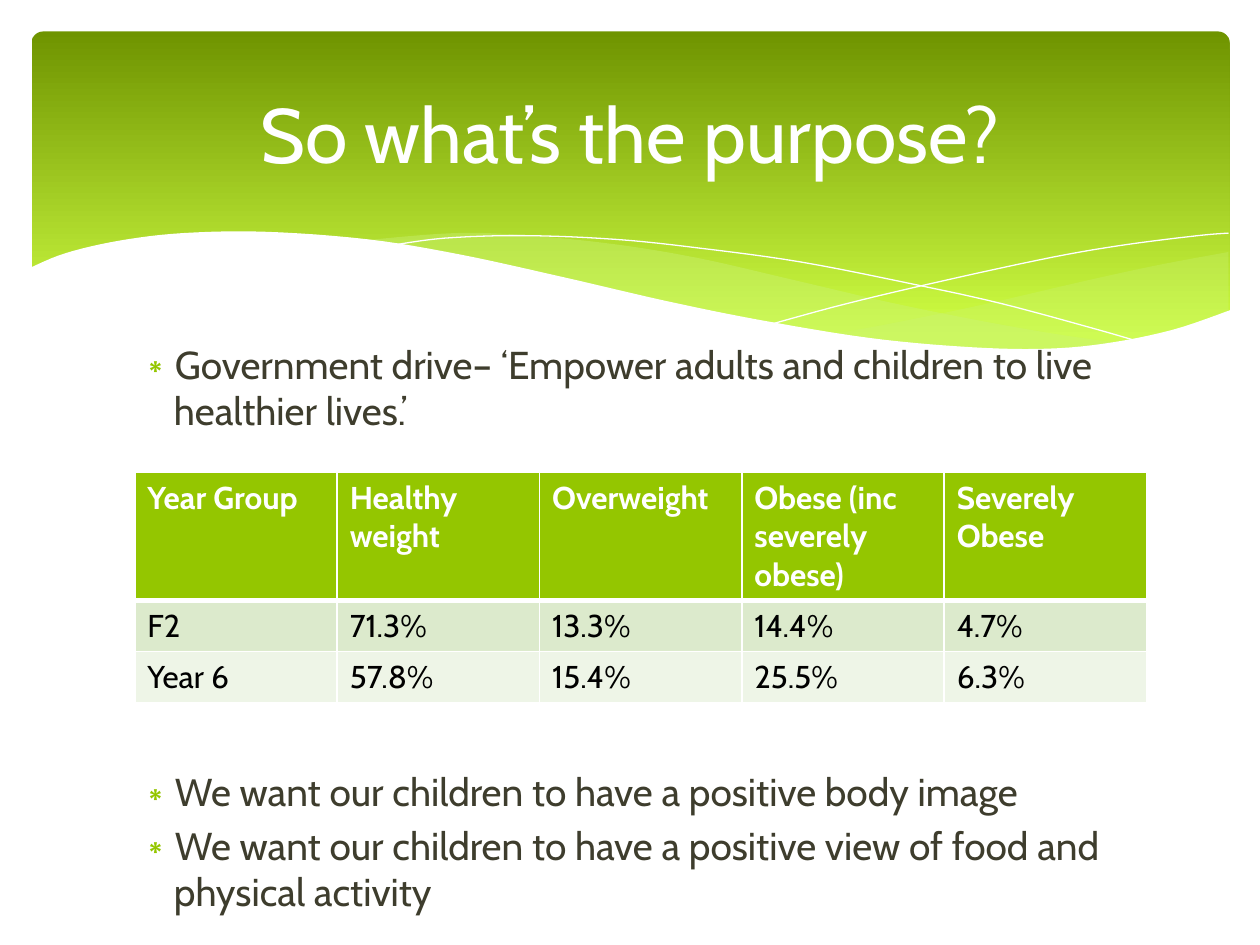
import lxml.etree
import pptx
import pptx.dml.color
import pptx.enum.shapes
import pptx.enum.text
import pptx.oxml.ns
import pptx.util

Inches = pptx.util.Inches
Pt = pptx.util.Pt
RGBColor = pptx.dml.color.RGBColor
qn = pptx.oxml.ns.qn

FONT = "Cabin"
WHITE = RGBColor(0xFF, 0xFF, 0xFF)
BLACK = RGBColor(0, 0, 0)
OLIVE = RGBColor(0x3E, 0x3D, 0x2D)
GREEN = RGBColor(0x94, 0xC6, 0x00)
DARK_GREEN = RGBColor(0x6F, 0x94, 0x00)
LIME = RGBColor(0xD0, 0xFF, 0x44)
SWELL_GREEN = RGBColor(0xCA, 0xF2, 0x78)
ROW_COLORS = [GREEN, RGBColor(0xDC, 0xEA, 0xCC), RGBColor(0xEE, 0xF5, 0xE7)]

RIGHT_SWELL_TOP = [(9.5, 1.75), (8.96, 1.85), (8.36, 1.98), (7.54, 2.17), (6.81, 2.32), (6.36, 2.4)]
RIGHT_SWELL_BOTTOM = [(6.36, 2.4), (6.94, 2.47), (7.56, 2.52), (8.19, 2.52), (8.72, 2.45),
                      (9.1, 2.37), (9.5, 2.22)]
MIDDLE_SWELL_TOP = [(8.68, 2.48), (8.12, 2.4), (7.5, 2.29), (6.81, 2.15), (6.04, 1.97),
                    (5.3, 1.8), (4.64, 1.69), (3.95, 1.62), (3.36, 1.6), (2.61, 1.66)]
MIDDLE_SWELL_BOTTOM = [(2.61, 1.66), (3.37, 1.78), (4.24, 1.97), (5.05, 2.15), (5.76, 2.3),
                       (6.4, 2.41), (6.97, 2.49), (7.6, 2.53), (8.13, 2.53), (8.68, 2.48)]
FALLING_LINE = [(2.84, 1.7), (3.28, 1.64), (3.91, 1.62), (4.64, 1.65), (5.31, 1.72),
                (6.11, 1.83), (7.02, 2.01), (7.7, 2.16), (8.44, 2.36), (8.82, 2.47)]
RISING_LINE = [(5.88, 2.32), (6.47, 2.16), (7.23, 1.98), (8.11, 1.79), (8.7, 1.69),
               (9.26, 1.62), (9.5, 1.6)]
WHITE_WAVE = [(-0.02, 1.88), (0.27, 1.76), (0.7, 1.66), (1.21, 1.6), (1.86, 1.59), (2.67, 1.65),
              (3.4, 1.77), (4.22, 1.95), (5.04, 2.14), (5.78, 2.29), (6.63, 2.43), (7.36, 2.5),
              (7.98, 2.52), (8.5, 2.48), (9.05, 2.37), (9.52, 2.21)]
WHITE_WAVE_BASE = [(9.52, 3.04), (-0.02, 3.04)]

YEAR_GROUPS = [
    ["Year Group", "Healthy weight", "Overweight", "Obese (inc severely obese)", "Severely Obese"],
    ["F2", "71.3%", "13.3%", "14.4%", "4.7%"],
    ["Year 6", "57.8%", "15.4%", "25.5%", "6.3%"],
]
AIMS = [
    ("Government drive– ‘Empower adults and children to live healthier lives.’", 4),
    ("We want our children to have a positive body image", 191),
    ("We want our children to have a positive view of food and physical activity", 4),
]


def write(paragraph, text, size, color, bold=False, align=None):
    """Add formatted text to a paragraph."""
    run = paragraph.add_run()
    run.text = text
    run.font.name = FONT
    run.font.size = Pt(size)
    run.font.bold = bold
    run.font.color.rgb = color
    paragraph.alignment = align


def smooth(points, steps=6):
    """Return a Catmull-Rom curve through the points."""
    padded = [points[0], *points, points[-1]]
    curve = [points[0]]
    for a, b, c, d in zip(padded, padded[1:], padded[2:], padded[3:]):
        for step in range(1, steps + 1):
            t = step / steps
            curve.append(tuple(
                (2 * q + (r - p) * t + (2 * p - 5 * q + 4 * r - s) * t ** 2
                 + (3 * q - p - 3 * r + s) * t ** 3) / 2
                for p, q, r, s in zip(a, b, c, d)))
    return curve


def add_curve(slide, left, top, points, fill=None, alpha=100):
    """Draw a filled outline, or a white hairline when no fill is given."""
    start, *rest = [(Inches(x), Inches(y)) for x, y in points]
    builder = slide.shapes.build_freeform(*start)
    builder.add_line_segments(rest, close=fill is not None)
    curve = builder.convert_to_shape(left, top)
    curve.shadow.inherit = False
    if fill is None:
        curve.fill.background()
        curve.line.color.rgb = WHITE
        curve.line.width = Pt(0)
        return
    curve.line.fill.background()
    curve.fill.solid()
    curve.fill.fore_color.rgb = fill
    if alpha < 100:
        color = curve.fill._xPr.find(".//" + qn("a:srgbClr"))
        lxml.etree.SubElement(color, qn("a:alpha"), val=str(alpha * 1000))


def add_banner(slide, left, top, width, height):
    """Draw the green gradient banner and its waves."""
    banner = slide.shapes.add_shape(
        pptx.enum.shapes.MSO_SHAPE.ROUNDED_RECTANGLE, left, top, width, height)
    banner.adjustments[0] = 0.034
    banner.shadow.inherit = False
    banner.line.fill.background()
    banner.fill.gradient()
    banner.fill.gradient_angle = 270
    for stop, color, position in zip(banner.fill.gradient_stops, (DARK_GREEN, LIME), (0, 0.9)):
        stop.color.rgb = color
        stop.position = position
    add_curve(slide, left, top, smooth(RIGHT_SWELL_TOP) + smooth(RIGHT_SWELL_BOTTOM), SWELL_GREEN, 29)
    add_curve(slide, left, top, smooth(MIDDLE_SWELL_TOP) + smooth(MIDDLE_SWELL_BOTTOM), SWELL_GREEN, 40)
    add_curve(slide, left, top, smooth(FALLING_LINE))
    add_curve(slide, left, top, smooth(RISING_LINE))
    add_curve(slide, left, top, smooth(WHITE_WAVE) + WHITE_WAVE_BASE, WHITE)


def place(slide, placeholder, left, top, width, height):
    """Move a placeholder to its box, in front of the banner, and return its text frame."""
    placeholder.left, placeholder.top = left, top
    placeholder.width, placeholder.height = width, height
    slide.shapes._spTree.append(placeholder._element)
    frame = placeholder.text_frame
    frame.auto_size = pptx.enum.text.MSO_AUTO_SIZE.NONE
    frame.word_wrap = True
    return frame


def add_title(slide, *box):
    """Fill the title placeholder."""
    frame = place(slide, slide.shapes.title, *box)
    frame.vertical_anchor = pptx.enum.text.MSO_ANCHOR.MIDDLE
    write(frame.paragraphs[0], "So what’s the purpose?", 44, WHITE,
          align=pptx.enum.text.PP_ALIGN.CENTER)


def add_aims(slide, *box):
    """Fill the body placeholder with the bulleted aims, leaving room for the table."""
    frame = place(slide, slide.placeholders[1], *box)
    frame.vertical_anchor = pptx.enum.text.MSO_ANCHOR.TOP
    for index, (aim, gap) in enumerate(AIMS):
        paragraph = frame.add_paragraph() if index else frame.paragraphs[0]
        write(paragraph, aim, 22.2, OLIVE)
        paragraph.space_before = Pt(gap)
        properties = paragraph._p.get_or_add_pPr()
        properties.set("marL", str(Inches(0.3)))
        properties.set("indent", str(-Inches(0.3)))
        bullet_color = lxml.etree.SubElement(properties, qn("a:buClr"))
        lxml.etree.SubElement(bullet_color, qn("a:srgbClr"), val=str(GREEN))
        lxml.etree.SubElement(properties, qn("a:buChar"), char="∗")


def set_borders(cell, top, bottom):
    """Give a cell white borders, with top and bottom widths in points."""
    properties = cell._tc.get_or_add_tcPr()
    for side, width in (("L", 1), ("R", 1), ("T", top), ("B", bottom)):
        border = lxml.etree.SubElement(properties, qn("a:ln" + side), w=str(Pt(width)))
        fill = lxml.etree.SubElement(border, qn("a:solidFill"))
        lxml.etree.SubElement(fill, qn("a:srgbClr"), val=str(WHITE))


def add_weight_table(slide, left, top, width, height):
    """Add the table of weight groups by year."""
    table = slide.shapes.add_table(
        len(YEAR_GROUPS), len(YEAR_GROUPS[0]), left, top, width, height).table
    body_height = Inches(0.4)
    for index, (row, values) in enumerate(zip(table.rows, YEAR_GROUPS)):
        header = index == 0
        row.height = height - 2 * body_height if header else body_height
        for cell, value in zip(row.cells, values):
            set_borders(cell, 3 if index == 1 else 1, 3 if header else 1)
            cell.fill.solid()
            cell.fill.fore_color.rgb = ROW_COLORS[index]
            write(cell.text_frame.paragraphs[0], value, 18, WHITE if header else BLACK, bold=header)


def main():
    """Build the slide and save it."""
    deck = pptx.Presentation()
    deck.slide_width, deck.slide_height = Inches(10), Inches(7.5)
    slide = deck.slides.add_slide(deck.slide_layouts[1])
    add_banner(slide, Inches(0.25), Inches(0.25), Inches(9.51), Inches(2.7))
    add_aims(slide, Inches(0.98), Inches(2.65), Inches(8.1), Inches(4.33))
    add_title(slide, Inches(0.5), Inches(0.37), Inches(9), Inches(1.37))
    add_weight_table(slide, Inches(1.07), Inches(3.75), Inches(8.03), Inches(1.81))
    deck.save("out.pptx")


if __name__ == "__main__":
    main()
